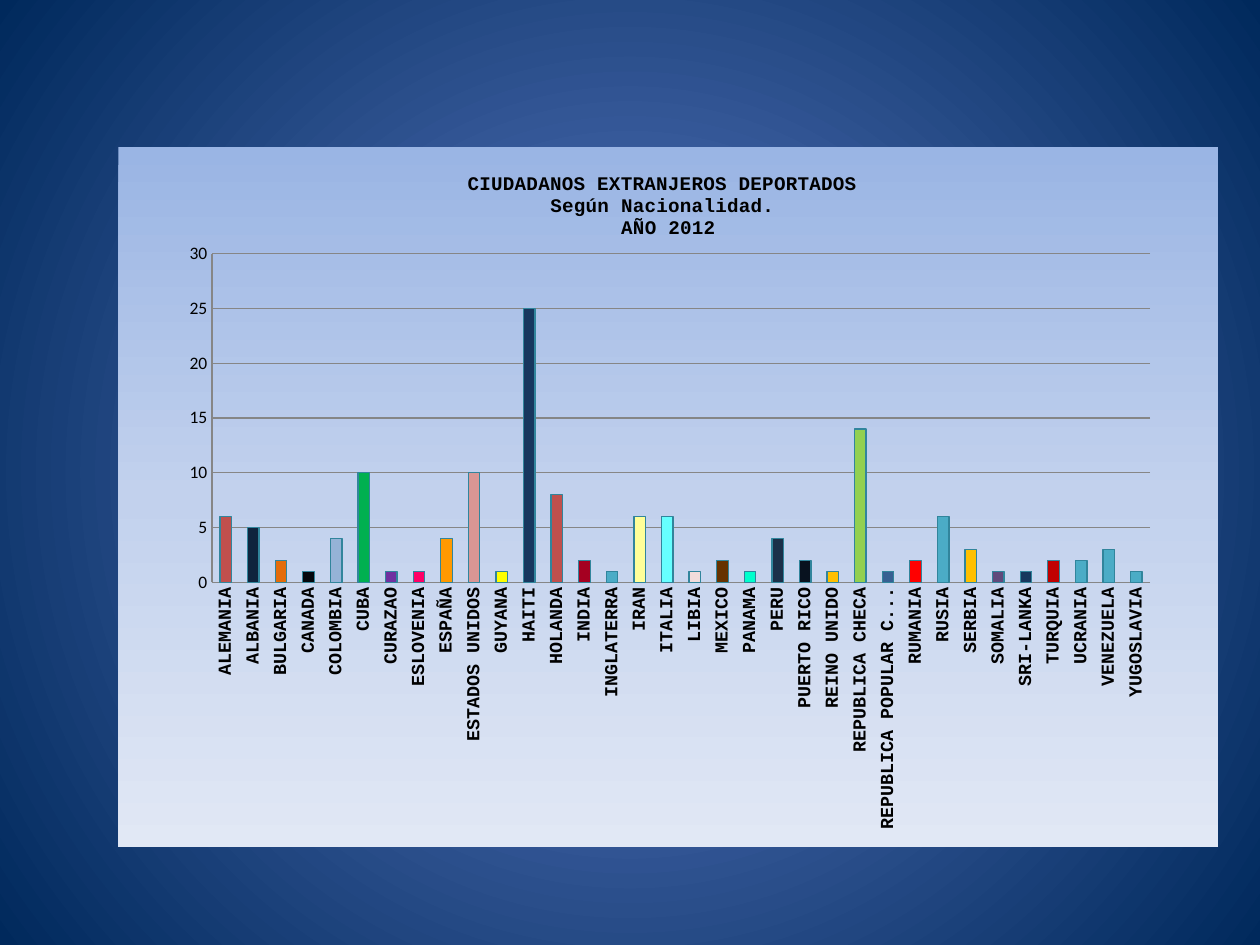
from lxml.etree import SubElement
from pptx import Presentation
from pptx.chart.data import CategoryChartData
from pptx.dml.color import RGBColor
from pptx.enum.chart import XL_CHART_TYPE, XL_TICK_MARK
from pptx.oxml import parse_xml
from pptx.oxml.ns import nsdecls, qn
from pptx.util import Inches, Pt

BLACK = RGBColor(0x00, 0x00, 0x00)
AQUA = RGBColor(0x4B, 0xAC, 0xC6)
TEAL = RGBColor(0x31, 0x85, 0x9C)
GRAY = RGBColor(0x86, 0x86, 0x86)
BLUE = RGBColor(0x5E, 0x7C, 0xC5)
NAVY = RGBColor(0x00, 0x29, 0x5C)
PANEL_STOPS = [
    (0, RGBColor(0x9A, 0xB5, 0xE4)),
    (50, RGBColor(0xC2, 0xD1, 0xED)),
    (100, RGBColor(0xE1, 0xE8, 0xF5)),
]
LINEAR = '<a:lin ang="5400000" scaled="0"/>'
CIRCLE = '<a:path path="circle"><a:fillToRect l="50000" t="50000" r="50000" b="50000"/></a:path>'

TITLE = "CIUDADANOS EXTRANJEROS DEPORTADOS \nSegún Nacionalidad. \nAÑO 2012"
DEPORTATIONS = [
    ("ALEMANIA", 6, "C0504D"),
    ("ALBANIA", 5, "0F243E"),
    ("BULGARIA", 2, "E46C0A"),
    ("CANADA", 1, "03070C"),
    ("COLOMBIA", 4, "95B3D7"),
    ("CUBA", 10, "00B050"),
    ("CURAZAO", 1, "7030A0"),
    ("ESLOVENIA", 1, "FF0066"),
    ("ESPAÑA", 4, "FF9900"),
    ("ESTADOS UNIDOS", 10, "D99694"),
    ("GUYANA", 1, "FFFF00"),
    ("HAITI", 25, "17375E"),
    ("HOLANDA", 8, "C0504D"),
    ("INDIA", 2, "A50021"),
    ("INGLATERRA", 1, None),
    ("IRAN", 6, "FFFF99"),
    ("ITALIA", 6, "66FFFF"),
    ("LIBIA", 1, "F2DCDB"),
    ("MEXICO", 2, "663300"),
    ("PANAMA", 1, "00FFCC"),
    ("PERU", 4, "1B3049"),
    ("PUERTO RICO", 2, "08121F"),
    ("REINO UNIDO", 1, "FFC000"),
    ("REPUBLICA CHECA", 14, "92D050"),
    ("REPUBLICA POPULAR CHINA", 1, "376092"),
    ("RUMANIA", 2, "FF0000"),
    ("RUSIA", 6, None),
    ("SERBIA", 3, "FFC000"),
    ("SOMALIA", 1, "604A7B"),
    ("SRI-LANKA", 1, "17375E"),
    ("TURQUIA", 2, "C00000"),
    ("UCRANIA", 2, None),
    ("VENEZUELA", 3, None),
    ("YUGOSLAVIA", 1, None),
]


class SlideBuilder:
    """Holds the text styles and the current slide, and adds its elements."""

    styles = {
        "base": {"name": "Calibri", "size": Pt(10), "bold": False},
        "label": {"name": "Courier New", "size": Pt(10.5), "bold": True},
        "title": {"name": "Courier New", "size": Pt(11), "bold": True},
    }

    def __init__(self, slide):
        self.slide = slide

    def format_font(self, font, style):
        for attribute, value in self.styles[style].items():
            setattr(font, attribute, value)
        font.color.rgb = BLACK

    def gradient(self, stops, direction):
        stop_xml = "".join(
            f'<a:gs pos="{position * 1000}"><a:srgbClr val="{color}"/></a:gs>'
            for position, color in stops
        )
        return (
            f'<a:gradFill {nsdecls("a")} rotWithShape="1">'
            f"<a:gsLst>{stop_xml}</a:gsLst>{direction}</a:gradFill>"
        )

    def add_background(self, stops):
        fill = self.gradient(stops, CIRCLE)
        background = parse_xml(
            f'<p:bg {nsdecls("p", "a")}><p:bgPr>{fill}<a:effectLst/></p:bgPr></p:bg>'
        )
        self.slide._element.cSld.insert(0, background)

    def add_column_chart(self, left, top, width, height, rows):
        names, values, colors = zip(*rows)
        data = CategoryChartData(number_format="General")
        data.categories = names
        data.add_series("Series 1", values)
        chart = self.slide.shapes.add_chart(
            XL_CHART_TYPE.COLUMN_CLUSTERED, left, top, width, height, data
        ).chart
        self.format_font(chart.font, "base")
        chart.has_legend = False
        plot = chart.plots[0]
        plot.vary_by_categories = False
        plot.gap_width = 140
        series = plot.series[0]
        series.invert_if_negative = False
        self.format_bar(series.format, AQUA)
        for index, color in enumerate(colors):
            if color:
                self.format_bar(series.points[index].format, RGBColor.from_string(color))
        return chart

    def format_bar(self, bar_format, color):
        bar_format.fill.solid()
        bar_format.fill.fore_color.rgb = color
        bar_format.line.color.rgb = TEAL
        bar_format.line.width = Pt(0.75)

    def format_title(self, chart, text):
        chart.has_title = True
        chart.chart_title.include_in_layout = False
        text_frame = chart.chart_title.text_frame
        text_frame.text = text
        for paragraph in text_frame.paragraphs:
            for run in paragraph.runs:
                self.format_font(run.font, "title")

    def format_axes(self, chart):
        category_axis, value_axis = chart.category_axis, chart.value_axis
        for axis, style in ((category_axis, "label"), (value_axis, "base")):
            axis.major_tick_mark = axis.minor_tick_mark = XL_TICK_MARK.NONE
            axis.format.line.color.rgb = GRAY
            self.format_font(axis.tick_labels.font, style)
        label_body = category_axis._element.find(f'{qn("c:txPr")}/{qn("a:bodyPr")}')
        label_body.set("rot", "-5400000")
        label_body.set("vert", "horz")
        scale = {"minimum_scale": 0, "maximum_scale": 30, "major_unit": 5}
        for attribute, value in scale.items():
            setattr(value_axis, attribute, value)
        value_axis.has_major_gridlines = True
        value_axis.major_gridlines.format.line.color.rgb = GRAY

    def format_panel(self, chart, stops):
        fill = self.gradient(stops, LINEAR)
        panel = parse_xml(
            f'<c:spPr {nsdecls("c", "a")}>{fill}<a:ln><a:noFill/></a:ln></c:spPr>'
        )
        chart._chartSpace.find(qn("c:chart")).addnext(panel)

    def place_plot(self, chart, **bounds):
        plot_area = chart._chartSpace.find(f'{qn("c:chart")}/{qn("c:plotArea")}')
        for layout in plot_area.findall(qn("c:layout")):
            plot_area.remove(layout)
        layout = parse_xml(f'<c:layout {nsdecls("c")}><c:manualLayout/></c:layout>')
        settings = {"layoutTarget": "inner", "xMode": "edge", "yMode": "edge", **bounds}
        for name, value in settings.items():
            SubElement(layout[0], qn(f"c:{name}")).set("val", str(value))
        plot_area.insert(0, layout)


def main():
    presentation = Presentation()
    presentation.slide_width, presentation.slide_height = Inches(10), Inches(7.5)
    builder = SlideBuilder(presentation.slides.add_slide(presentation.slide_layouts[6]))
    builder.add_background([(0, BLUE), (100, NAVY)])
    chart = builder.add_column_chart(
        Inches(0.94), Inches(1.17), Inches(8.73), Inches(5.55), DEPORTATIONS
    )
    builder.format_title(chart, TITLE)
    builder.format_axes(chart)
    builder.format_panel(chart, PANEL_STOPS)
    builder.place_plot(chart, x=0.085, y=0.152, w=0.853, h=0.47)
    presentation.save("out.pptx")


if __name__ == "__main__":
    main()
